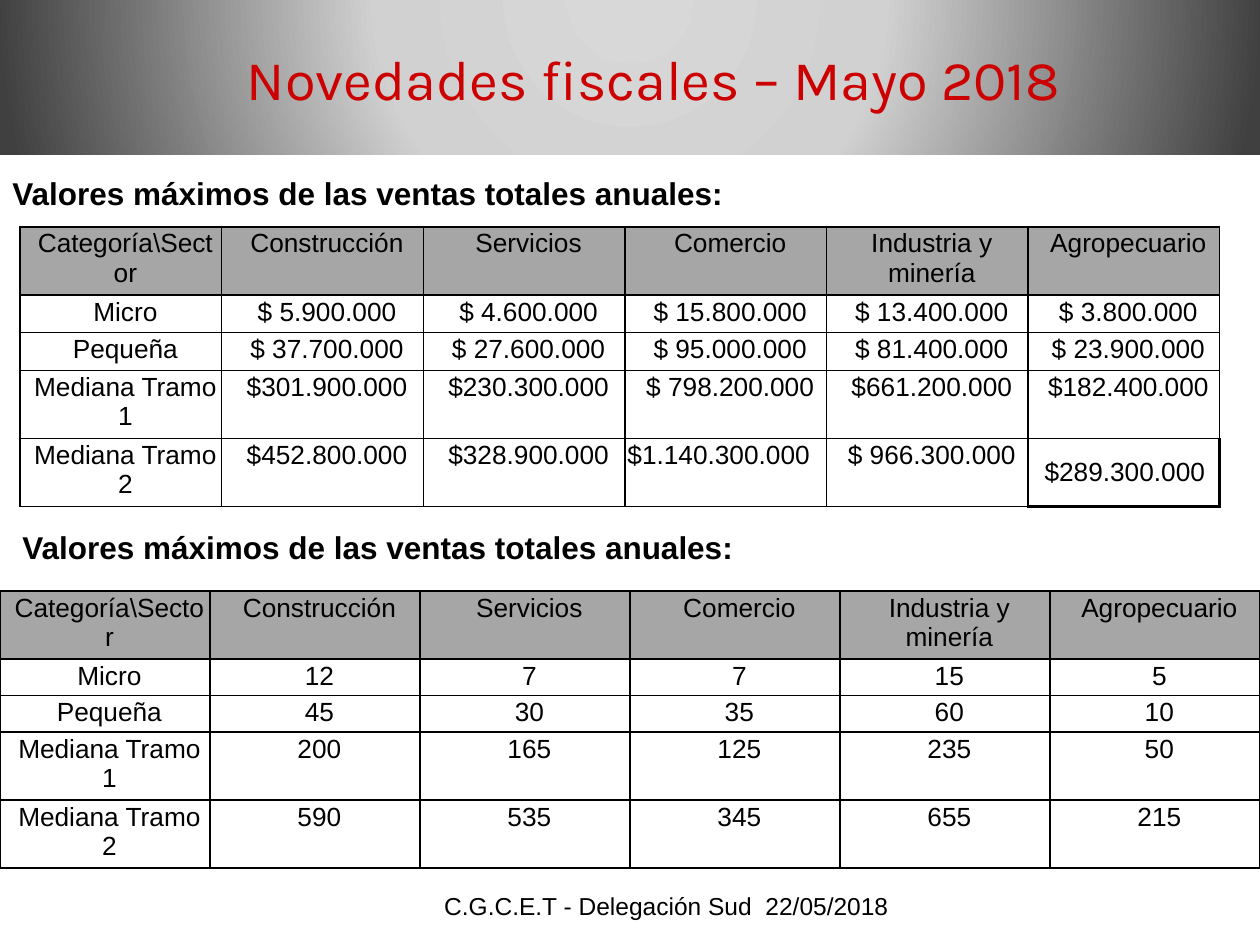
import pptx
import pptx.util
import pptx.oxml
import pptx.oxml.ns
import pptx.dml.color
import pptx.enum.shapes
import pptx.enum.text
import lxml.etree

Inches = pptx.util.Inches
Pt = pptx.util.Pt
Align = pptx.enum.text.PP_ALIGN
Anchor = pptx.enum.text.MSO_ANCHOR
qn = pptx.oxml.ns.qn


def color(code):
    return pptx.dml.color.RGBColor.from_string(code)


class Deck:
    font = "Arial"
    ink = "000000"
    head = "A6A6A6"

    def __init__(self):
        self.file = pptx.Presentation()
        self.file.slide_width = Inches(10)
        self.file.slide_height = Inches(7.5)
        self.slide = self.file.slides.add_slide(self.file.slide_layouts[5])

    def text(self, para, words, size, bold=False, font=None, ink=None):
        run = para.add_run()
        run.text = words
        run.font.size = Pt(size)
        run.font.bold = bold
        run.font.name = font or self.font
        run.font.color.rgb = color(ink or self.ink)

    def indent(self, para, left=0, first=0):
        props = para._p.get_or_add_pPr()
        props.set("marL", str(Inches(left)))
        props.set("indent", str(Inches(first)))

    def band(self, x, y, w, h, stops):
        kind = pptx.enum.shapes.MSO_SHAPE.RECTANGLE
        shape = self.slide.shapes.add_shape(kind, Inches(x), Inches(y), Inches(w), Inches(h))
        shape.shadow.inherit = False
        shape.line.fill.background()
        shape.fill.background()
        marks = "".join(
            f'<a:gs pos="{pos * 1000}"><a:srgbClr val="{code}"/></a:gs>' for pos, code in stops
        )
        grad = pptx.oxml.parse_xml(
            f'<a:gradFill {pptx.oxml.ns.nsdecls("a")} rotWithShape="1"><a:gsLst>{marks}</a:gsLst>'
            '<a:path path="circle"><a:fillToRect l="50000" t="-80000" r="50000" b="180000"/></a:path>'
            '</a:gradFill>'
        )
        props = shape._element.spPr
        props.replace(props.find(qn("a:noFill")), grad)
        self.slide.shapes._spTree.insert(2, shape._element)

    def title(self, words, x, y, w, h):
        shape = self.slide.shapes.title
        shape.left, shape.top, shape.width, shape.height = map(Inches, (x, y, w, h))
        frame = shape.text_frame
        frame.auto_size = pptx.enum.text.MSO_AUTO_SIZE.NONE
        frame.vertical_anchor = Anchor.BOTTOM
        para = frame.paragraphs[0]
        para.alignment = Align.CENTER
        self.indent(para, first=0.38)
        self.text(para, words, 32, font="Karla", ink="CC0000")

    def label(self, words, x, y, w, h, size, bold=False, align=Align.LEFT):
        box = self.slide.shapes.add_textbox(Inches(x), Inches(y), Inches(w), Inches(h))
        frame = box.text_frame
        frame.word_wrap = True
        para = frame.paragraphs[0]
        para.alignment = align
        self.text(para, words, size, bold)

    def border(self, cell, **widths):
        props = cell._tc.get_or_add_tcPr()
        for side in "LRTB":
            tag = qn("a:ln" + side)
            line = props.find(tag)
            if line is None:
                line = lxml.etree.SubElement(props, tag)
                fill = lxml.etree.SubElement(line, qn("a:solidFill"))
                lxml.etree.SubElement(fill, qn("a:srgbClr")).set("val", self.ink)
            line.set("w", str(Pt(widths.get(side, 1))))

    def pad(self, cell, gap):
        cell.margin_left = cell.margin_right = Inches(gap)
        cell.margin_top = cell.margin_bottom = Inches(gap)

    def table(self, rows, x, y, cols, tall):
        frame = self.slide.shapes.add_table(
            len(rows), len(cols), Inches(x), Inches(y), Inches(sum(cols)), Inches(sum(tall))
        )
        grid = frame.table
        grid.first_row = grid.horz_banding = False
        for col, width in zip(grid.columns, cols):
            col.width = Inches(width)
        for row, height in zip(grid.rows, tall):
            row.height = Inches(height)
        for r, texts in enumerate(rows):
            for c, words in enumerate(texts):
                cell = grid.cell(r, c)
                self.pad(cell, 0.02)
                self.border(cell, T=1 if r else 1.5)
                if r:
                    cell.fill.background()
                else:
                    cell.fill.solid()
                    cell.fill.fore_color.rgb = color(self.head)
                para = cell.text_frame.paragraphs[0]
                para.alignment = Align.CENTER
                self.indent(para, left=0.07)
                self.text(para, words, 15)
        return grid


def main():
    deck = Deck()
    deck.band(0, 0, 10, 1.23, [(0, "D8D8D8"), (40, "D1D1D1"), (100, "404040")])
    deck.title("Novedades fiscales – Mayo 2018", 0, 0, 10, 0.94)
    deck.label("C.G.C.E.T - Delegación Sud  22/05/2018", 2.5, 7.02, 5.58, 0.4, 14, align=Align.CENTER)

    heads = ["Categoría\\Sector", "Construcción", "Servicios", "Comercio",
             "Industria y minería", "Agropecuario"]
    names = ["Micro", "Pequeña", "Mediana Tramo 1", "Mediana Tramo 2"]
    sales = [
        ["$ 5.900.000", "$ 4.600.000", "$ 15.800.000", "$ 13.400.000", "$ 3.800.000"],
        ["$ 37.700.000", "$ 27.600.000", "$ 95.000.000", "$ 81.400.000", "$ 23.900.000"],
        ["$301.900.000", "$230.300.000", "$ 798.200.000", "$661.200.000", "$182.400.000"],
        ["$452.800.000", "$328.900.000", "$1.140.300.000", "$ 966.300.000", "$289.300.000"],
    ]
    staff = [
        ["12", "7", "7", "15", "5"],
        ["45", "30", "35", "60", "10"],
        ["200", "165", "125", "235", "50"],
        ["590", "535", "345", "655", "215"],
    ]

    def build(data):
        return [heads] + [[name] + row for name, row in zip(names, data)]

    for x, y in [(0, 1.33), (0.08, 4.14)]:
        deck.label("Valores máximos de las ventas totales anuales:", x, y, 10, 0.4, 18, bold=True)

    grid = deck.table(build(sales), 0.16, 1.8, [1.6] * 5 + [1.52], [0.54, 0.3, 0.3, 0.53, 0.53])
    wide = grid.cell(4, 3).text_frame.paragraphs[0]
    wide.alignment = Align.JUSTIFY
    deck.indent(wide)
    last = grid.cell(4, 5)
    last.vertical_anchor = Anchor.MIDDLE
    deck.pad(last, 0.01)
    deck.border(last, R=1.5, B=1.5)
    para = last.text_frame.paragraphs[0]
    para.alignment = Align.LEFT
    deck.indent(para, left=0.12)

    deck.table(build(staff), 0, 4.69, [10 / 6] * 6, [0.54, 0.29, 0.29, 0.54, 0.54])
    deck.file.save("out.pptx")


if __name__ == "__main__":
    main()
